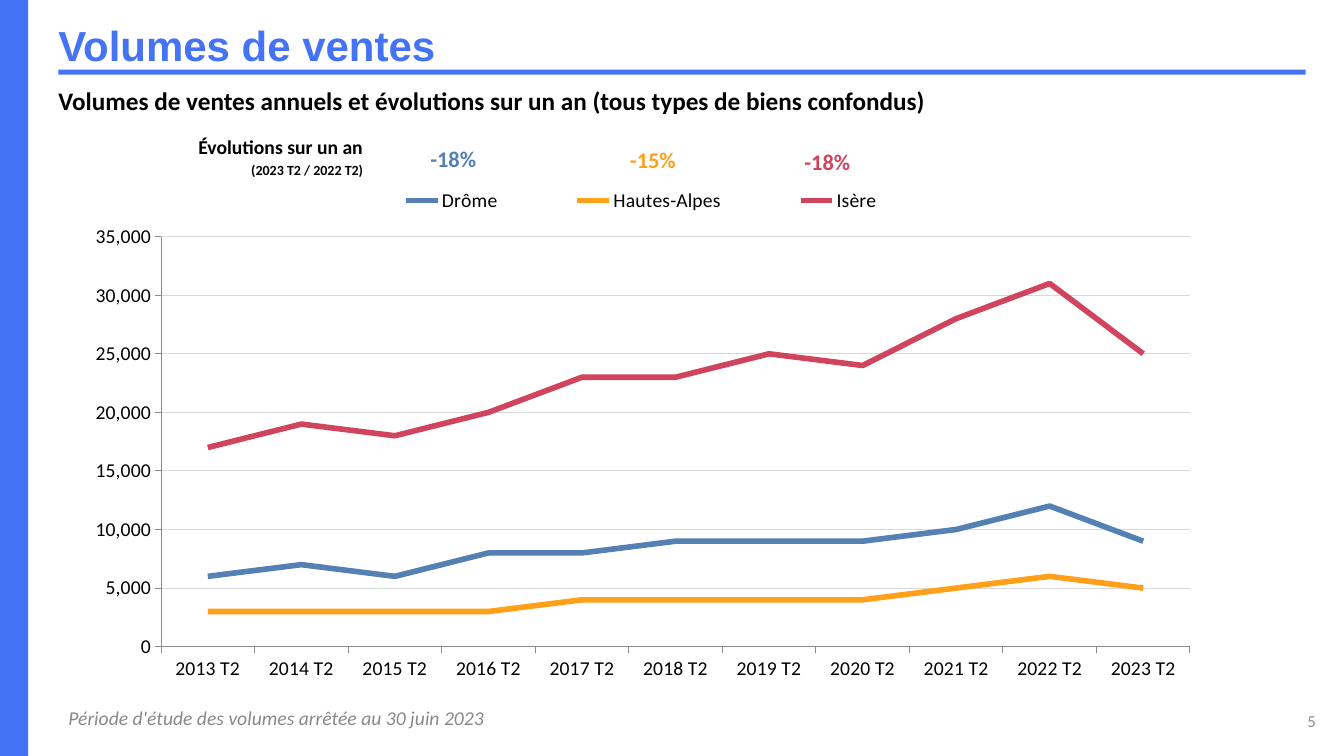
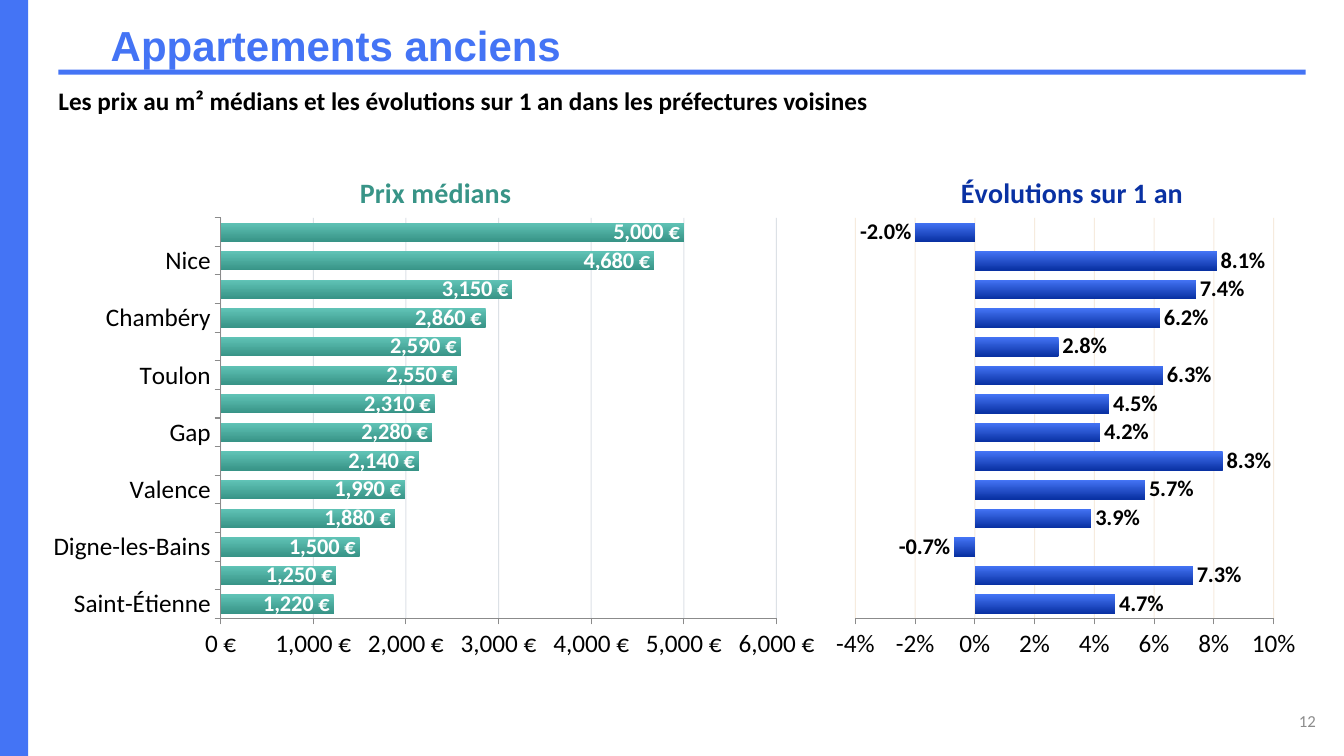
from lxml import etree
from pptx import Presentation
from pptx.chart.data import CategoryChartData
from pptx.dml.color import RGBColor
from pptx.enum import chart as ch, shapes, text
from pptx.oxml import ns
from pptx.util import Inches, Pt

BLUE, BLACK, GREY = "4474F5", "000000", "898989"
PAGE_GREY, AXIS_GREY, GRID_GREY = "8C8C8C", "8B8B8B", "D9D9D9"
TEAL_LIGHT, TEAL, NAVY = "60C3B6", "389487", "0931A3"
EURO = '#,##0\\ "€"'

QUARTERS = [f"{year} T2" for year in range(2013, 2024)]
# department, colour, one-year change, left and top of its change, yearly sales in thousands
DEPARTMENTS = [
    ("Drôme", "5480B3", "-18%", 4.17, 1.39, [6, 7, 6, 8, 8, 9, 9, 9, 10, 12, 9]),
    ("Hautes-Alpes", "FFA01B", "-15%", 6.15, 1.4, [3, 3, 3, 3, 4, 4, 4, 4, 5, 6, 5]),
    ("Isère", "D0445D", "-18%", 7.88, 1.42, [17, 19, 18, 20, 23, 23, 25, 24, 28, 31, 25]),
]
# prefecture, median price per m², one-year change
PREFECTURES = [
    ("Saint-Étienne", 1220, 0.047), ("Privas", 1250, 0.073),
    ("Digne-les-Bains", 1500, -0.007), ("Bourg-en-Bresse", 1880, 0.039),
    ("Valence", 1990, 0.057), ("Nîmes", 2140, 0.083), ("Gap", 2280, 0.042),
    ("Avignon", 2310, 0.045), ("Toulon", 2550, 0.063), ("Grenoble", 2590, 0.028),
    ("Chambéry", 2860, 0.062), ("Marseille", 3150, 0.074), ("Nice", 4680, 0.081),
    ("Lyon", 5000, -0.02),
]


def rgb(value):
    return RGBColor.from_string(value)


def set_all(target, **values):
    for name, value in values.items():
        setattr(target, name, value)


def style_font(font, size, color=BLACK, name="Calibri", bold=False, italic=False):
    set_all(font, size=Pt(size), name=name, bold=bold, italic=italic)
    font.color.rgb = rgb(color)


def add_text(slide, box, lines, align=text.PP_ALIGN.LEFT, spacing=None, frame_format=None, **font):
    """Write (words, size) lines in a box that share one font format."""
    frame = slide.shapes.add_textbox(*map(Inches, box)).text_frame
    set_all(frame, word_wrap=True, **(frame_format or {}))
    for i, (words, size) in enumerate(lines):
        paragraph = frame.add_paragraph() if i else frame.paragraphs[0]
        paragraph.alignment = align
        if spacing:
            paragraph.line_spacing = Pt(spacing)
        run = paragraph.add_run()
        run.text = words
        style_font(run.font, size, **font)


def add_band(slide, box):
    band = slide.shapes.add_shape(shapes.MSO_SHAPE.RECTANGLE, *map(Inches, box))
    band.shadow.inherit = False
    band.fill.solid()
    band.fill.fore_color.rgb = rgb(BLUE)
    band.line.fill.background()


def add_page(deck, title, title_left, subtitle, number):
    """Add a slide with the shared bands, headings and page number."""
    slide = deck.slides.add_slide(deck.slide_layouts[6])
    add_band(slide, (0, 0, 0.28, 7.5))
    add_band(slide, (0.58, 0.69, 12.37, 0.05))
    add_text(slide, (title_left, 0.14, 11.7, 0.61), [(title, 30)],
             color=BLUE, name="Arial", bold=True)
    add_text(slide, (0.58, 0.8, 12.37, 0.4), [(subtitle, 18)],
             frame_format={"margin_left": 0}, bold=True)
    add_text(slide, (10.15, 6.95, 3, 0.4), [(number, 12)], align=text.PP_ALIGN.RIGHT,
             frame_format={"vertical_anchor": text.MSO_ANCHOR.MIDDLE}, color=PAGE_GREY)
    return slide


def place_part(part, x, y, w=None, h=None, inner=False):
    """Fix a chart part at fractions of the chart's size."""
    for old in part.findall(ns.qn("c:layout")):
        part.remove(old)
    layout = etree.Element(ns.qn("c:layout"))
    manual = etree.SubElement(layout, ns.qn("c:manualLayout"))
    settings = [("layoutTarget", "inner" if inner else None), ("xMode", "edge"),
                ("yMode", "edge"), ("x", x), ("y", y), ("w", w), ("h", h)]
    for tag, value in settings:
        if value is not None:
            etree.SubElement(manual, ns.qn(f"c:{tag}")).set("val", str(value))
    before = {"plotArea": None, "title": "c:tx", "legend": "c:legendPos"}
    anchor = before[etree.QName(part).localname]
    part.insert(0 if anchor is None else part.index(part.find(ns.qn(anchor))) + 1, layout)


def add_chart(slide, kind, box, categories, series, plot_box):
    data = CategoryChartData()
    data.categories = categories
    for name, values in series:
        data.add_series(name, values)
    chart = slide.shapes.add_chart(kind, *map(Inches, box), data).chart
    style_font(chart.font, 10)
    set_all(chart, has_legend=False, has_title=False)
    chart.plots[0].vary_by_categories = False
    place_part(chart.plots[0]._element.getparent(), *plot_box, inner=True)
    return chart


def style_axes(chart, size, number_format, low, high, step, grid, grid_alpha=None):
    for axis in (chart.category_axis, chart.value_axis):
        set_all(axis, major_tick_mark=ch.XL_TICK_MARK.OUTSIDE,
                minor_tick_mark=ch.XL_TICK_MARK.NONE,
                tick_label_position=ch.XL_TICK_LABEL_POSITION.LOW)
        style_font(axis.tick_labels.font, size)
        axis.format.line.color.rgb = rgb(AXIS_GREY)
        axis.format.line.width = Pt(0.75)
    values = chart.value_axis
    set_all(values, minimum_scale=low, maximum_scale=high, major_unit=step,
            has_major_gridlines=True)
    set_all(values.tick_labels, number_format=number_format, number_format_is_linked=False)
    line = values.major_gridlines.format.line
    line.color.rgb = rgb(grid)
    line.width = Pt(0.75)
    if grid_alpha:
        color = next(values.major_gridlines._xAx.find(ns.qn("c:majorGridlines")).iter(ns.qn("a:srgbClr")))
        etree.SubElement(color, ns.qn("a:alpha")).set("val", str(grid_alpha * 1000))


def add_sales_chart(slide, box):
    series = [(name, [1000 * v for v in sales]) for name, *_, sales in DEPARTMENTS]
    chart = add_chart(slide, ch.XL_CHART_TYPE.LINE, box, QUARTERS, series,
                      (0.08, 0.12, 0.9, 0.79))
    style_axes(chart, 14, "#,##0", 0, 35000, 5000, GRID_GREY)
    for line, (_, color, *_) in zip(chart.plots[0].series, DEPARTMENTS):
        line.smooth = False
        line.marker.style = ch.XL_MARKER_STYLE.NONE
        line.format.line.color.rgb = rgb(color)
        line.format.line.width = Pt(4)
    chart.has_legend = True
    set_all(chart.legend, position=ch.XL_LEGEND_POSITION.TOP, include_in_layout=False)
    style_font(chart.legend.font, 14)
    place_part(chart.legend._element, 0.23, 0.015, 0.54, 0.07)


def add_bars(slide, box, title, title_x, title_color, categories, values, plot_box,
             gradient, label_format, label_color, label_position, axes):
    chart = add_chart(slide, ch.XL_CHART_TYPE.BAR_CLUSTERED, box, categories,
                      [("Series 1", values)], plot_box)
    style_axes(chart, 18, **axes)
    chart.has_title = True
    run = chart.chart_title.text_frame.paragraphs[0].add_run()
    run.text = title
    style_font(run.font, 20, title_color, bold=True)
    place_part(chart.chart_title._element, title_x, 0.05)
    plot = chart.plots[0]
    plot.gap_width = 50
    bars = plot.series[0]
    bars.invert_if_negative = False
    bars.format.fill.gradient()
    bars.format.fill.gradient_angle = 270
    for stop, color, position in zip(bars.format.fill.gradient_stops, gradient, (0, 1)):
        stop.color.rgb = rgb(color)
        stop.position = position
    labels = bars.data_labels
    set_all(labels, show_value=True, number_format=label_format,
            number_format_is_linked=False, position=label_position)
    style_font(labels.font, 16, label_color, bold=True)
    return chart


def build_sales(deck):
    slide = add_page(deck, "Volumes de ventes", 0.48,
                     "Volumes de ventes annuels et évolutions sur un an (tous types de biens confondus)", "5")
    add_sales_chart(slide, (0.69, 1.73, 11.34, 5.15))
    add_text(slide, (1.59, 1.33, 2.01, 0.49),
             [("Évolutions sur un an", 14), ("(2023 T2 / 2022 T2)", 10)],
             align=text.PP_ALIGN.RIGHT, spacing=14,
             frame_format={"margin_left": 0, "margin_right": 0}, bold=True)
    for _, color, change, left, top, _ in DEPARTMENTS:
        add_text(slide, (left, top, 0.84, 0.37), [(change, 16)], color=color, bold=True)
    add_text(slide, (0.58, 6.95, 7.72, 0.34),
             [("Période d'étude des volumes arrêtée au 30 juin 2023", 14)],
             color=GREY, italic=True)


def build_flats(deck):
    slide = add_page(deck, "Appartements anciens", 1,
                     "Les prix au m² médians et les évolutions sur 1 an dans les préfectures voisines", "12")
    names, prices, changes = zip(*PREFECTURES)
    add_bars(slide, (0.39, 1.4, 7.82, 5.25), "Prix médians", 0.4, TEAL, names, prices,
             (0.23, 0.145, 0.705, 0.757), (TEAL_LIGHT, TEAL), EURO, "FFFFFF",
             ch.XL_LABEL_POSITION.INSIDE_END,
             dict(number_format=EURO, low=0, high=6000, step=1000,
                  grid="16375D", grid_alpha=15))
    ranks = [str(i + 1) for i in range(len(names))]
    changes_chart = add_bars(
        slide, (8.2, 1.4, 4.74, 5.25), "Évolutions sur 1 an", 0.27, NAVY, ranks, changes,
        (0.06, 0.145, 0.875, 0.757), (BLUE, NAVY), "0.0%", BLACK,
        ch.XL_LABEL_POSITION.OUTSIDE_END,
        dict(number_format="0%", low=-0.04, high=0.1, step=0.02,
             grid="C67925", grid_alpha=15))
    changes_chart.category_axis.visible = False


def main():
    deck = Presentation()
    set_all(deck, slide_width=Inches(13.33), slide_height=Inches(7.5))
    build_sales(deck)
    build_flats(deck)
    deck.save("out.pptx")


if __name__ == "__main__":
    main()
